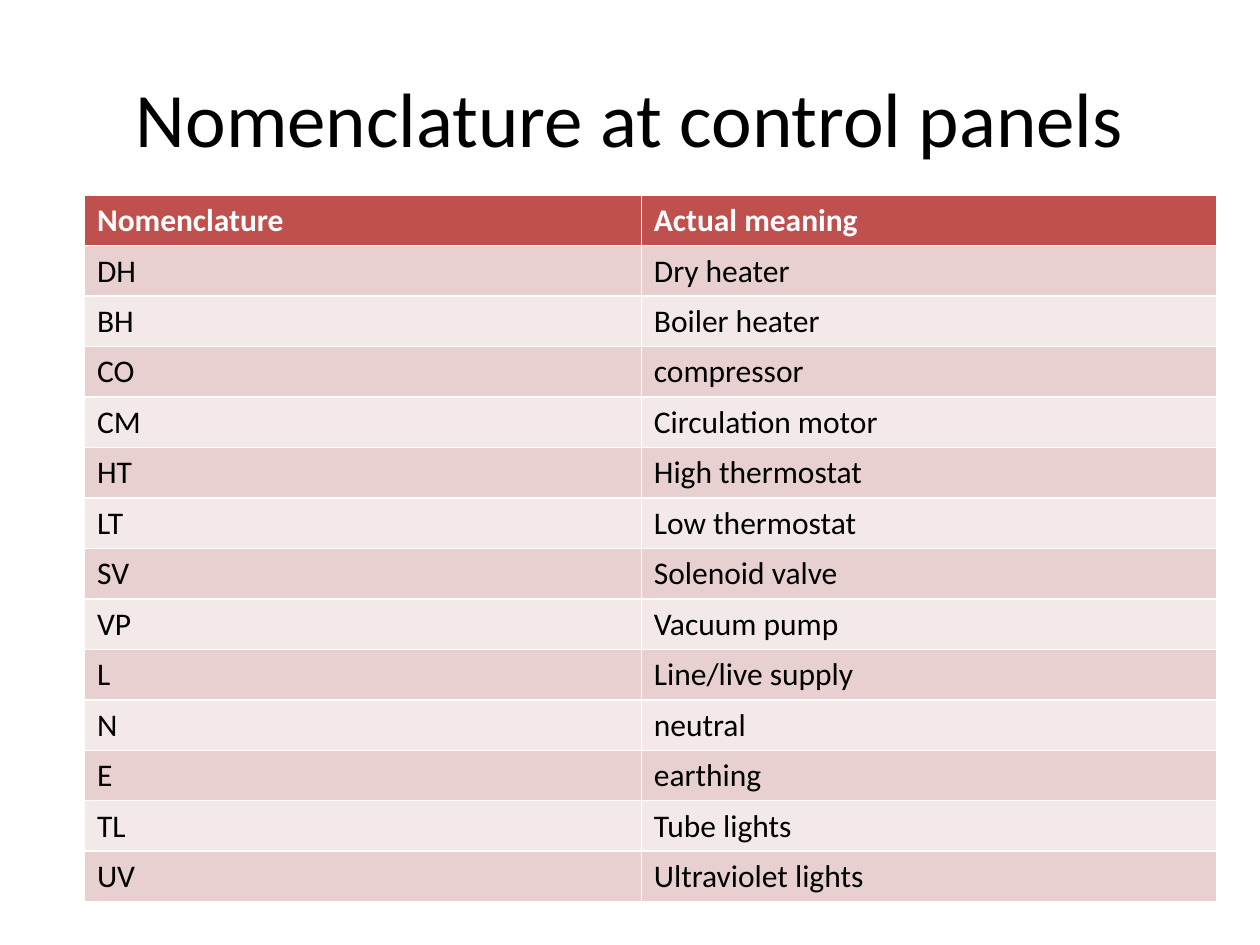
from pptx import Presentation
from pptx.dml.color import RGBColor
from pptx.enum.text import MSO_ANCHOR, PP_ALIGN
from pptx.util import Inches, Pt

CENTER = PP_ALIGN.CENTER
MIDDLE = MSO_ANCHOR.MIDDLE

MEANINGS = [
    ("Nomenclature", "Actual meaning"),
    ("DH", "Dry heater"),
    ("BH", "Boiler heater"),
    ("CO", "compressor"),
    ("CM", "Circulation motor"),
    ("HT", "High thermostat"),
    ("LT", "Low thermostat"),
    ("SV", "Solenoid valve"),
    ("VP", "Vacuum pump"),
    ("L", "Line/live supply"),
    ("N", "neutral"),
    ("E", "earthing"),
    ("TL", "Tube lights"),
    ("UV", "Ultraviolet lights"),
]


def color(value):
    return RGBColor.from_string(value)


class SlideWriter:
    """Holds the style and the current slide, and places elements by shares of its size."""

    font_name = "Calibri"
    ink = "000000"
    paper = "FFFFFF"
    header_fill = "C0504D"
    band_fills = ("F4E9E9", "E8D0D0")

    def __init__(self, deck):
        self.width, self.height = deck.slide_width, deck.slide_height
        self.slide = deck.slides.add_slide(deck.slide_layouts[6])

    def area(self, left, top, width, height):
        return (round(left * self.width), round(top * self.height),
                round(width * self.width), round(height * self.height))

    def style(self, para, size, ink, bold=False):
        font = para.font
        font.name, font.size, font.bold = self.font_name, Pt(size), bold
        font.color.rgb = color(ink)

    def title(self, text, *shares):
        box = self.slide.shapes.add_textbox(*self.area(*shares))
        frame = box.text_frame
        frame.word_wrap = True
        frame.vertical_anchor = MIDDLE
        para = frame.paragraphs[0]
        para.text = text
        para.alignment = CENTER
        self.style(para, 44, self.ink)

    def table(self, rows, column_shares, *shares):
        frame = self.slide.shapes.add_table(len(rows), len(column_shares), *self.area(*shares))
        table = frame.table
        for column, share in zip(table.columns, column_shares):
            column.width = round(share * self.width)
        for row_index, texts in enumerate(rows):
            header = row_index == 0
            fill = self.header_fill if header else self.band_fills[row_index % 2]
            for column_index, text in enumerate(texts):
                cell = table.cell(row_index, column_index)
                cell.text = text
                cell.fill.solid()
                cell.fill.fore_color.rgb = color(fill)
                self.style(cell.text_frame.paragraphs[0], 18,
                           self.paper if header else self.ink, header)


def main():
    deck = Presentation()
    deck.slide_width, deck.slide_height = Inches(10), Inches(7.5)
    writer = SlideWriter(deck)
    writer.title("Nomenclature at control panels", 0.05, 0.04, 0.9, 1 / 6)
    writer.table(MEANINGS, (0.442, 0.457), 0.067, 1.55 / 7.5, 0.899, 5.6 / 7.5)
    deck.save("out.pptx")


if __name__ == "__main__":
    main()
